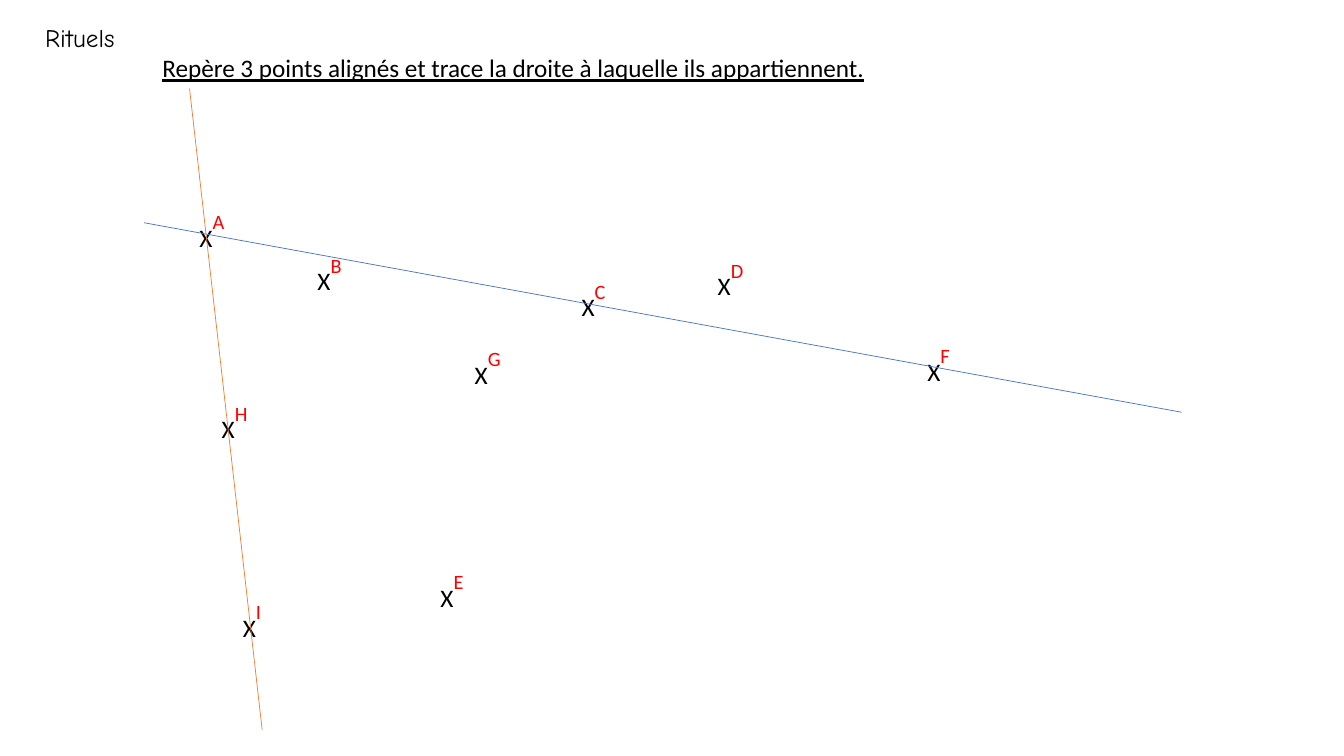
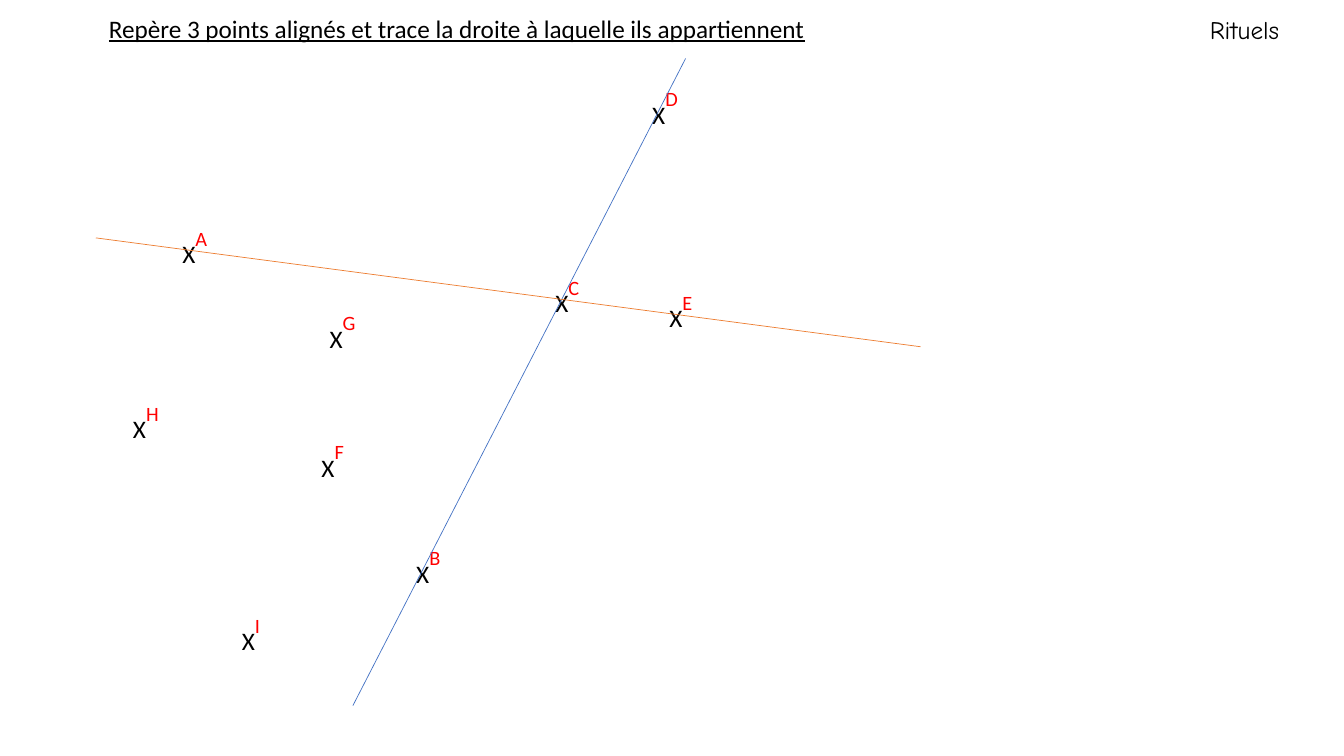
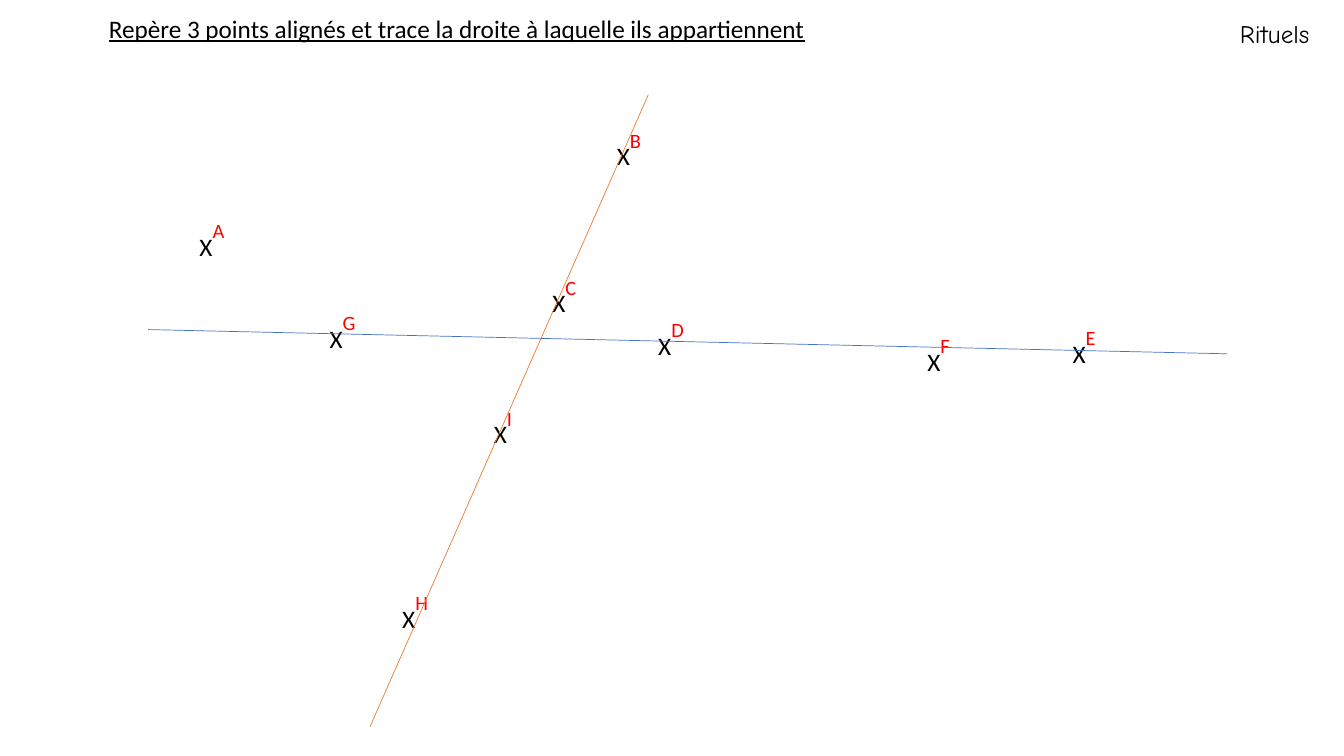
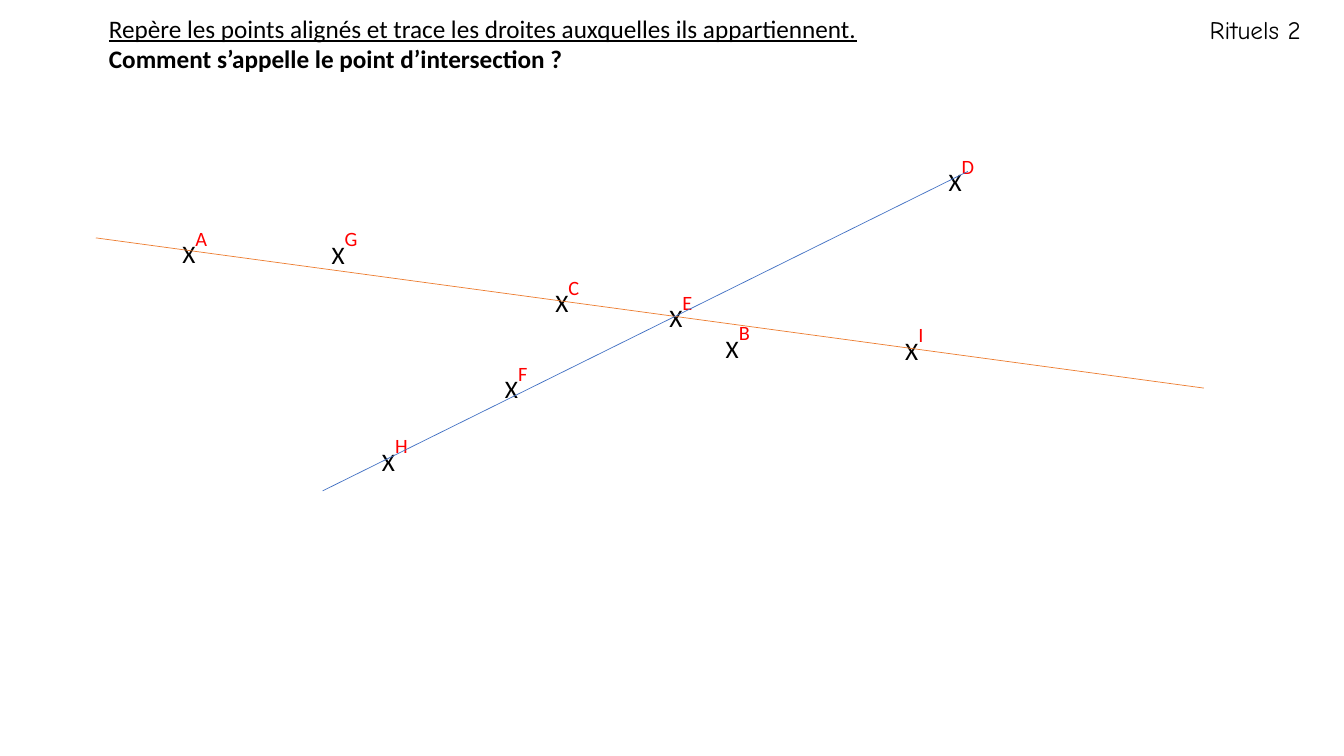
from typing import NamedTuple

from pptx import Presentation
from pptx import util as u
from pptx.dml.color import RGBColor
from pptx.enum import shapes, text
from pptx.oxml.ns import qn
from lxml import etree

# Shared look: 100 px make one inch
EMU_PER_PX = 9144
WIDTH, HEIGHT = 1333, 750
BLACK, RED, BLUE, ORANGE = "000000", "FF0000", "4472C4", "ED7D31"
BODY_FONT, TAG_FONT = "Calibri", "Comic Neue"
TEXT_SIZE, LABEL_SIZE = 18, 25
LINE_HEIGHT, TITLE_WIDTH, MARK_HEIGHT = 40, 842, 52
MARK_WIDTHS = dict(zip("ABCDEFGHI", (47, 46, 46, 48, 45, 44, 48, 48, 39)))


class Mark(NamedTuple):
    letter: str
    left: int
    top: int


class Line(NamedTuple):
    color: str
    x1: int
    y1: int
    x2: int
    y2: int


class Tag(NamedTuple):
    left: int
    top: int
    text: str = "Rituels"
    width: int = 101


class Exercise(NamedTuple):
    tag: Tag
    marks: list[Mark]
    lines: list[Line]
    task: str = "Repère 3 points alignés et trace la droite à laquelle ils appartiennent"
    question: str = ""
    title_left: int = 98
    title_top: int = 8


def px(n: int) -> u.Emu:
    return u.Emu(n * EMU_PER_PX)


def rgb(color: str) -> RGBColor:
    return RGBColor.from_string(color)


def style(font, name: str = BODY_FONT, size: int = TEXT_SIZE, color: str = BLACK) -> None:
    font.name = name
    font.size = u.Pt(size)
    font.color.rgb = rgb(color)


def add_title(s, ex: Exercise) -> None:
    sp = s.shapes.title
    height = 71 if ex.question else LINE_HEIGHT
    sp.left, sp.top = px(ex.title_left), px(ex.title_top)
    sp.width, sp.height = px(TITLE_WIDTH), px(height)
    tf = sp.text_frame
    tf.word_wrap = True
    tf.vertical_anchor = text.MSO_ANCHOR.TOP
    tf.auto_size = text.MSO_AUTO_SIZE.SHAPE_TO_FIT_TEXT
    tf.text = "\n".join(filter(None, (ex.task, ex.question)))
    for i, p in enumerate(tf.paragraphs):
        p.alignment = text.PP_ALIGN.LEFT
        style(p.font)
        p.font.underline = i == 0
        p.font.bold = i > 0


def add_label(s, left: int, top: int, width: int, height: int):
    """Add an unwrapped text box and return its paragraph."""
    tf = s.shapes.add_textbox(px(left), px(top), px(width), px(height)).text_frame
    tf.word_wrap = False
    tf.auto_size = text.MSO_AUTO_SIZE.SHAPE_TO_FIT_TEXT
    return tf.paragraphs[0]


def add_mark(s, mark: Mark) -> None:
    p = add_label(s, mark.left, mark.top, MARK_WIDTHS[mark.letter], MARK_HEIGHT)
    for content, size, color in (("X", TEXT_SIZE, BLACK), (mark.letter, LABEL_SIZE, RED)):
        r = p.add_run()
        r.text = content
        style(r.font, size=size, color=color)
    r._r.get_or_add_rPr().set("baseline", "50000")


def add_line(s, line: Line) -> None:
    ends = map(px, line[1:])
    cx = s.shapes.add_connector(shapes.MSO_CONNECTOR.STRAIGHT, *ends)
    cx.line.color.rgb = rgb(line.color)
    cx.line.width = u.Pt(0.5)
    etree.SubElement(cx._element.spPr, qn("a:effectLst"))


def add_tag(s, tag: Tag) -> None:
    p = add_label(s, tag.left, tag.top, tag.width, LINE_HEIGHT)
    p.text = tag.text
    style(p.font, name=TAG_FONT)


# Slide contents
EXERCISES = [
    Exercise(
        Tag(35, 17),
        [Mark("A", 188, 203), Mark("B", 305, 246), Mark("C", 567, 272),
         Mark("D", 702, 251), Mark("E", 427, 560), Mark("H", 210, 393),
         Mark("F", 910, 336), Mark("G", 461, 339), Mark("I", 231, 590)],
        [Line(BLUE, 143, 221, 1172, 409), Line(ORANGE, 188, 88, 260, 724)],
        task="Repère 3 points alignés et trace la droite à laquelle ils appartiennent.",
        title_left=151,
        title_top=47,
    ),
    Exercise(
        Tag(1190, 9),
        [Mark("A", 171, 219), Mark("B", 403, 536), Mark("C", 541, 268),
         Mark("D", 637, 81), Mark("E", 654, 283), Mark("H", 122, 393),
         Mark("F", 309, 431), Mark("G", 317, 303), Mark("I", 230, 603)],
        [Line(BLUE, 680, 58, 350, 700), Line(ORANGE, 913, 344, 95, 236)],
    ),
    Exercise(
        Tag(1220, 13),
        [Mark("A", 188, 212), Mark("B", 602, 122), Mark("C", 538, 268),
         Mark("D", 643, 310), Mark("E", 1054, 318), Mark("H", 389, 581),
         Mark("F", 910, 326), Mark("G", 317, 303), Mark("I", 480, 398)],
        [Line(BLUE, 147, 327, 1217, 351), Line(ORANGE, 367, 721, 643, 94)],
    ),
    Exercise(
        Tag(1190, 9, "Rituels 2", 124),
        [Mark("A", 171, 219), Mark("B", 710, 313), Mark("C", 541, 268),
         Mark("D", 931, 148), Mark("E", 654, 283), Mark("H", 369, 425),
         Mark("F", 491, 353), Mark("G", 319, 220), Mark("I", 888, 315)],
        [Line(ORANGE, 1194, 385, 95, 236), Line(BLUE, 320, 487, 960, 170)],
        task="Repère les points alignés et trace les droites auxquelles ils appartiennent.",
        question="Comment s’appelle le point d’intersection ?",
    ),
]


def main() -> None:
    prs = Presentation()
    prs.slide_width, prs.slide_height = px(WIDTH), px(HEIGHT)
    title_only = prs.slide_layouts[5]
    for ex in EXERCISES:
        s = prs.slides.add_slide(title_only)
        add_title(s, ex)
        for mark in ex.marks:
            add_mark(s, mark)
        for line in ex.lines:
            add_line(s, line)
        add_tag(s, ex.tag)
    prs.save("out.pptx")


if __name__ == "__main__":
    main()
